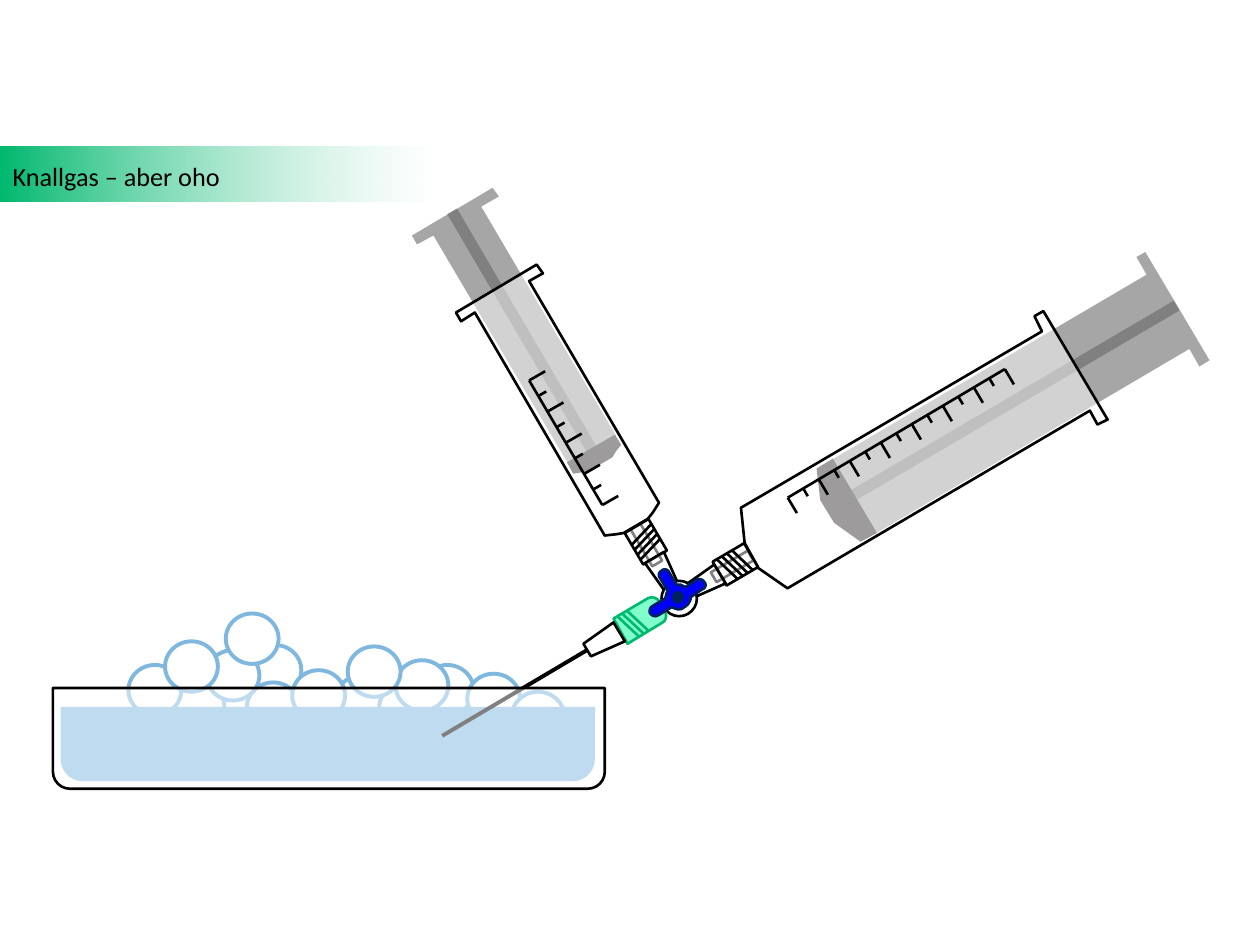
"""Build a slide showing two syringes that feed gas into a soap bath."""
from lxml.etree import SubElement
from pptx import Presentation
from pptx.dml.color import RGBColor
from pptx.enum.shapes import MSO_CONNECTOR, MSO_SHAPE
from pptx.enum.text import MSO_ANCHOR, MSO_AUTO_SIZE, PP_ALIGN
from pptx.oxml.ns import qn
from pptx.util import Pt

BLACK = RGBColor(0, 0, 0)
WHITE = RGBColor(255, 255, 255)
FOAM = RGBColor(0x7F, 0xB7, 0xDF)
GREEN = RGBColor(0x00, 0xB8, 0x6E)
MINT = RGBColor(0x80, 0xFF, 0xCC)
GREY = RGBColor(0xA6, 0xA6, 0xA6)
STEEL = RGBColor(0x80, 0x80, 0x80)
RUBBER = RGBColor(0x3B, 0x38, 0x38)
BLUE = RGBColor(0, 0, 255)
NAVY = RGBColor(0x00, 0x20, 0x60)

BUBBLES = [
    (142, 368.6), (191.5, 386), (121.7, 390), (141, 390), (98, 389), (167, 383),
    (216.7, 390), (240.5, 380), (267, 385), (292.3, 395.3), (226, 377.3),
    (198.7, 369.4), (73.4, 380), (118, 371.5), (94.3, 366.5), (129, 350.6),
]
LARGE = {
    "turn": 149.6,
    "plunger": [(691.2, 205.9), (685.4, 209.5), (679.7, 199.4), (499.7, 305.3),
                (475.2, 262.8), (655.2, 157), (649.4, 146.9), (654.5, 144)],
    "rod": (465.8, 227.5, 221.8, 6.5),
    "stopper": [(491.8, 309.6), (476.6, 298.8), (468.7, 285.8), (466.6, 267.8),
                (475.9, 262.1), (501.1, 304.6)],
    "tip": (406.1, 320.4, 24.5, 6.5),
    "barrel": [(632.9, 239.8), (627.1, 242.6), (622.8, 234.7), (450, 336.2),
               (433.4, 324.7), (425.5, 310.3), (423.4, 290.2), (595.4, 189.4),
               (591.1, 180.7), (596.2, 177.8)],
    "collar": (409.7, 314.6, 20.9, 15.8),
    "thread": ((421.9, 331.2), (-12.2, -11.5), (2.88, -1.7), 4),
    "scale": ((574.2, 210.9), (-17.72, 10.5), (5.2, 8.8), 8),
}
SMALL = {
    "turn": 59.6,
    "plunger": [(281.5, 107.3), (285.1, 112.3), (275, 118.1), (352.1, 249.1),
                (324.7, 265), (247.7, 134.6), (238.3, 139.7), (235.4, 134.6)],
    "rod": (218.9, 186.5, 159.8, 6.5),
    "stopper": [(351.4, 248.4), (355, 254.2), (352.1, 257.8), (349.9, 261.4),
                (336.2, 269.3), (331.9, 270), (327.6, 270.7), (324, 264.2)],
    "tip": (357.1, 308.2, 24.5, 6.5),
    "barrel": [(306.7, 151.2), (310.3, 156.2), (302.4, 160.6), (376.6, 287.3),
               (373, 293), (370.1, 296.6), (356.4, 304.6), (352.1, 305.3),
               (345.6, 306), (271.4, 178.6), (263.5, 183.6), (260.6, 178.6)],
    "collar": (358.6, 301.7, 20.9, 15.8),
    "thread": ((377.2, 308), (-11.2, 11.8), (-1.65, -2.85), 4),
    "scale": ((302.4, 217.4), (10.45, 17.8), (9.1, -5.2), 5),
}
UPPER = [(368.6, 321.8), (379.4, 315.4), (388.1, 334.8), (380.9, 339.1)]
SIDE = [(408.2, 322.6), (414.7, 333.4), (395.3, 342), (391, 334.8)]
LOWER = [(x - 57.6, y + 33.1) for x, y in SIDE]
HUB = [(350.6, 353.5), (358.6, 367.9), (378.7, 355.7),
       (380.9, 354.2, 381.6, 351.4, 378.7, 346.3),
       (375.8, 341.3, 373, 340.6, 370.1, 342)]
HANDLE = [
    (402.5, 332.6), (403.9, 334.1, 403.2, 336.2, 401, 337),
    (394.6, 341.3), (394.6, 342.7), (393.8, 344.9, 392.4, 346.3, 391, 347),
    (389.5, 348.5, 387.4, 348.5, 385.9, 347.8), (383.8, 347), (376.6, 351.4),
    (374.4, 352.8, 373, 352.1, 371.5, 350.6),
    (370.8, 349.2, 371.5, 347, 373, 346.3), (380.2, 342), (380.9, 339.1),
    (381.6, 337.7), (377.3, 330.5), (375.8, 329, 376.6, 326.9, 378, 326.2),
    (379.4, 324.7, 381.6, 325.4, 382.3, 326.9), (386.6, 334.1), (388.8, 334.1),
    (391.7, 335.5), (398.2, 331.2), (399.6, 330.5, 401.8, 331.2, 402.5, 332.6),
]


def fade(node, share):
    """Set the opacity of the first colour below a node."""
    SubElement(node.find(".//" + qn("a:srgbClr")), qn("a:alpha"), val=str(share * 1000))


def paint(shape, fill=None, line=None, width=1.5, share=100):
    """Give a shape its fill, line and opacity."""
    shape.shadow.inherit = False
    if fill is None:
        shape.fill.background()
    else:
        shape.fill.solid()
        shape.fill.fore_color.rgb = fill
        if share < 100:
            fade(shape._element.spPr, share)
    if line is None:
        shape.line.fill.background()
    else:
        shape.line.color.rgb = line
        shape.line.width = Pt(width)


def form(slide, kind, box, turn=0, **look):
    """Add a preset shape."""
    shape = slide.shapes.add_shape(kind, *map(Pt, box))
    shape.rotation = turn
    paint(shape, **look)
    return shape


def bend(start, curve, steps=6):
    """Return points along a cubic curve."""
    ends = [start, curve[:2], curve[2:4], curve[4:]]
    spots = []
    for i in range(1, steps + 1):
        t = i / steps
        parts = ((1 - t) ** 3, 3 * t * (1 - t) ** 2, 3 * t * t * (1 - t), t ** 3)
        spots.append(tuple(sum(p * e[k] for p, e in zip(parts, ends)) for k in (0, 1)))
    return spots


def outline(slide, points, **look):
    """Add a closed outline of straight and curved edges."""
    spots = [points[0]]
    for point in points[1:]:
        spots += [point] if len(point) == 2 else bend(spots[-1], point)
    spots = [(Pt(x), Pt(y)) for x, y in spots]
    pen = slide.shapes.build_freeform(*spots[0])
    pen.add_line_segments(spots[1:], close=True)
    paint(pen.convert_to_shape(), **look)


def rule(slide, start, move, color=BLACK, width=1.5):
    """Add a straight line from a start by a move."""
    ends = (*start, start[0] + move[0], start[1] + move[1])
    line = slide.shapes.add_connector(MSO_CONNECTOR.STRAIGHT, *map(Pt, ends))
    line.line.color.rgb = color
    line.line.width = Pt(width)
    SubElement(line._element.spPr, qn("a:effectLst"))


def hatch(slide, start, move, step, count, color=BLACK):
    """Add equal lines at an even step."""
    for i in range(count):
        rule(slide, (start[0] + i * step[0], start[1] + i * step[1]), move, color)


def gauge(slide, start, step, tick, count):
    """Add a scale with long ticks and half-length ticks between them."""
    rule(slide, start, [d * (count - 1) for d in step])
    hatch(slide, start, tick, step, count)
    half = [s + d / 2 for s, d in zip(start, step)]
    hatch(slide, half, [d / 2 for d in tick], step, count - 1)


def syringe(slide, part):
    """Add a syringe with plunger, barrel, thread and scale."""
    turn = part["turn"]
    glass = {"fill": WHITE, "line": BLACK, "share": 50}
    outline(slide, part["plunger"], fill=GREY)
    form(slide, MSO_SHAPE.RECTANGLE, part["rod"], turn, fill=STEEL)
    outline(slide, part["stopper"], fill=RUBBER)
    form(slide, MSO_SHAPE.RECTANGLE, part["tip"], turn, line=BLACK)
    outline(slide, part["barrel"], **glass)
    form(slide, MSO_SHAPE.RECTANGLE, part["collar"], turn, **glass)
    hatch(slide, *part["thread"])
    gauge(slide, *part["scale"])


def valve(slide):
    """Add the three-way valve with its hub and needle."""
    glass = {"fill": WHITE, "line": BLACK, "share": 50}
    for cone in (UPPER, SIDE):
        outline(slide, cone, **glass)
    form(slide, MSO_SHAPE.OVAL, (378, 331.9, 20.2, 20.2), fill=WHITE, line=BLACK)
    outline(slide, HUB, fill=MINT, line=GREEN)
    hatch(slide, (353.2, 352.6), (12, 11.2), (2.6, -1.75), 3, GREEN)
    outline(slide, HANDLE, fill=BLUE, line=NAVY)
    form(slide, MSO_SHAPE.OVAL, (383.8, 337.7, 7.2, 7.2), fill=NAVY)
    outline(slide, LOWER, **glass)
    rule(slide, (335.5, 371.5), (-82.8, 49), width=2.25)


def tub(slide, box, round_, **look):
    """Add a basin with round lower corners."""
    shape = form(slide, MSO_SHAPE.ROUND_2_SAME_RECTANGLE, box, 180, **look)
    shape.adjustments[0] = round_


def banner(slide, words):
    """Add the fading bar and place the title on it."""
    bar = form(slide, MSO_SHAPE.RECTANGLE, (0, 83.5, 247.7, 31.7))
    bar.fill.gradient()
    bar.fill.gradient_angle = 180
    for stop, color in zip(bar.fill.gradient_stops, (WHITE, GREEN)):
        stop.color.rgb = color
    fade(bar._element.spPr, 42)
    title = slide.shapes.title
    title.left, title.top, title.width, title.height = map(Pt, (0, 87.8, 134, 25.2))
    bar._element.addnext(title._element)
    frame = title.text_frame
    frame.word_wrap = False
    frame.auto_size = MSO_AUTO_SIZE.SHAPE_TO_FIT_TEXT
    frame.vertical_anchor = MSO_ANCHOR.TOP
    para = frame.paragraphs[0]
    para.alignment = PP_ALIGN.LEFT
    run = para.add_run()
    run.text = words
    run.font.name, run.font.size = "Calibri", Pt(15)
    run.font.color.rgb = BLACK


def main():
    """Build and save the slide."""
    deck = Presentation()
    deck.slide_width, deck.slide_height = Pt(720), Pt(540)
    slide = deck.slides.add_slide(deck.slide_layouts[5])
    for spot in BUBBLES:
        form(slide, MSO_SHAPE.OVAL, (*spot, 30.2, 28.8), fill=WHITE, line=FOAM, width=2.25)
    tub(slide, (34.6, 403.9, 305.3, 42.5), 0.3, fill=FOAM)
    banner(slide, "Knallgas – aber oho")
    syringe(slide, LARGE)
    syringe(slide, SMALL)
    valve(slide)
    tub(slide, (30.2, 393.1, 315.4, 57.6), 0.17, fill=WHITE, line=BLACK, share=50)
    deck.save("out.pptx")


if __name__ == "__main__":
    main()
